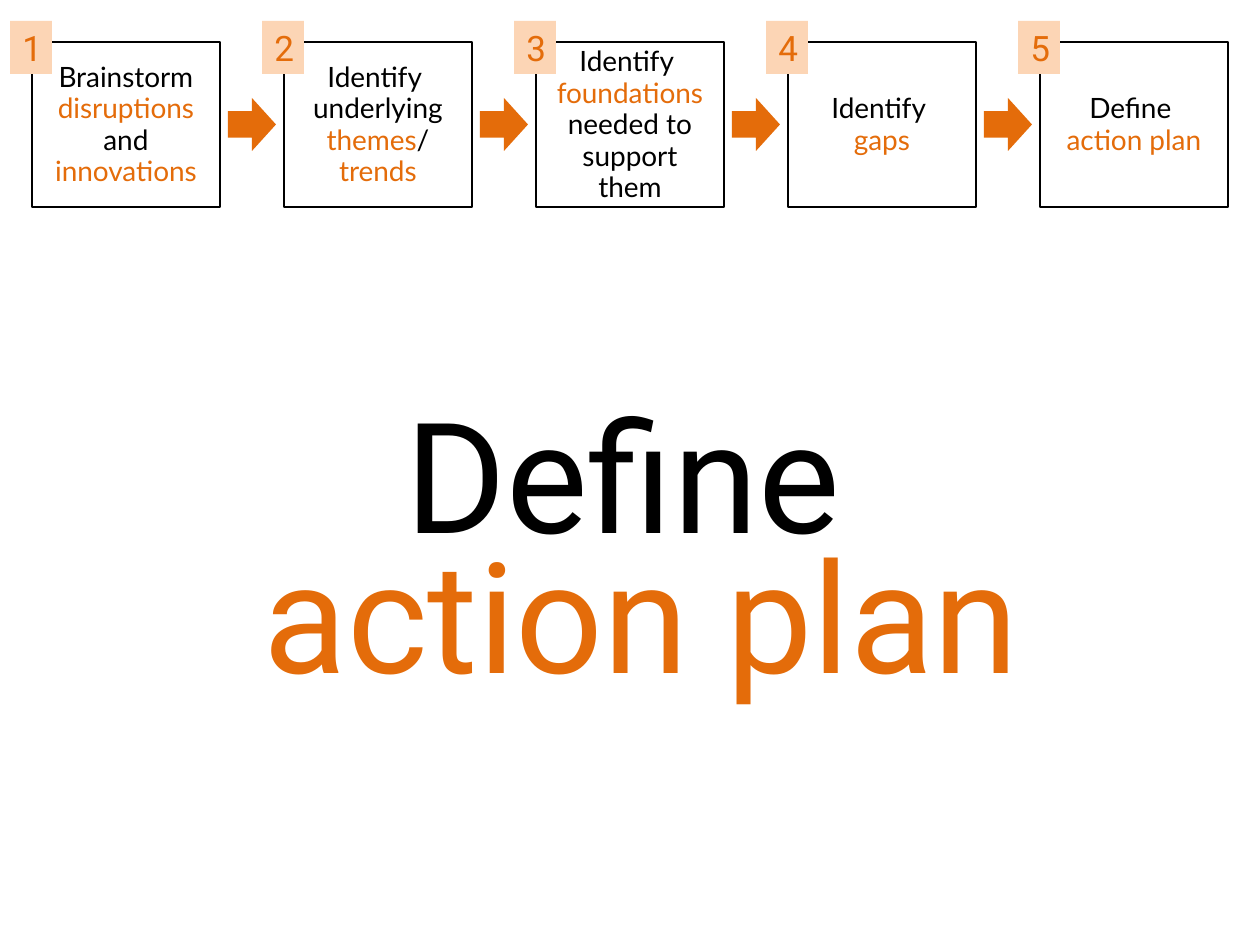
import dataclasses
import typing

import pptx
import pptx.dml.color
import pptx.enum.shapes
import pptx.enum.text
import pptx.util

RGB = pptx.dml.color.RGBColor
SHAPE = pptx.enum.shapes.MSO_SHAPE
ANCHOR = pptx.enum.text.MSO_ANCHOR
PX = 914400 / 126


@dataclasses.dataclass(frozen=True)
class Theme:
    black: RGB = RGB(0x00, 0x00, 0x00)
    white: RGB = RGB(0xFF, 0xFF, 0xFF)
    accent: RGB = RGB(0xE4, 0x6C, 0x0A)
    tint: RGB = RGB(0xFC, 0xD5, 0xB5)
    title_font: str = "Roboto"
    body_font: str = "Lato"
    title_size: int = 88
    title_leading: int = 80
    badge_size: int = 20
    step_size: int = 16
    step_leading: int = 18


class Box(typing.NamedTuple):
    left: int
    top: int
    width: int
    height: int

    def shifted(self, dx: int) -> "Box":
        return self._replace(left=self.left + dx)

    def emu(self) -> list[int]:
        return [round(v * PX) for v in self]


class Part(typing.NamedTuple):
    text: str
    accent: bool = False


class Style(typing.NamedTuple):
    font: str
    size: int
    leading: int | None = None


THEME = Theme()
TITLE_STYLE = Style(THEME.title_font, THEME.title_size, THEME.title_leading)
STEP_STYLE = Style(THEME.body_font, THEME.step_size, THEME.step_leading)
BADGE_STYLE = Style(THEME.title_font, THEME.badge_size)

PITCH = 252
TITLE = Box(84, 418, 1115, 295)
STEP = Box(32, 42, 188, 165)
ARROW = Box(228, 98, 48, 53)
BADGE = Box(10, 21, 42, 53)

ACTION_PLAN = [Part("Define \n"), Part("action plan", True)]
STEPS = [
    [Part("Brainstorm "), Part("disruptions", True),
     Part(" and "), Part("innovations", True)],
    [Part("Identify \nunderlying"), Part(" themes", True),
     Part("/ "), Part("trends", True)],
    [Part("Identify \n"), Part("foundations", True),
     Part(" needed to support them")],
    [Part("Identify \n"), Part("gaps", True)],
    ACTION_PLAN,
]


def write(sp, parts: list[Part], style: Style, anchor=ANCHOR.MIDDLE) -> None:
    """Fill a shape with one centred paragraph; newlines become line breaks."""
    tf = sp.text_frame
    tf.word_wrap = True
    tf.vertical_anchor = anchor
    p = tf.paragraphs[0]
    p.alignment = pptx.enum.text.PP_ALIGN.CENTER
    if style.leading:
        p.line_spacing = pptx.util.Pt(style.leading)
    for part in parts:
        for i, text in enumerate(part.text.split("\n")):
            if i:
                p.add_line_break()
            if text:
                r = p.add_run()
                r.text = text
                r.font.name = style.font
                r.font.size = pptx.util.Pt(style.size)
                r.font.color.rgb = THEME.accent if part.accent else THEME.black


def add_block(s, kind, box: Box, fill: RGB, line: RGB | None = None):
    sp = s.shapes.add_shape(kind, *box.emu())
    sp.shadow.inherit = False
    sp.fill.solid()
    sp.fill.fore_color.rgb = fill
    if line is None:
        sp.line.fill.background()
    else:
        sp.line.color.rgb = line
        sp.line.width = pptx.util.Pt(0.75)
    return sp


def add_title(s, parts: list[Part]) -> None:
    sp = s.shapes.title
    sp.left, sp.top, sp.width, sp.height = TITLE.emu()
    write(sp, parts, TITLE_STYLE, ANCHOR.TOP)
    sp.text_frame.auto_size = pptx.enum.text.MSO_AUTO_SIZE.SHAPE_TO_FIT_TEXT


def add_step(s, index: int, parts: list[Part]) -> None:
    """Draw a step box, its number badge and the arrow to the next step."""
    dx = index * PITCH
    step = add_block(s, SHAPE.RECTANGLE, STEP.shifted(dx), THEME.white, THEME.black)
    write(step, parts, STEP_STYLE)
    badge = add_block(s, SHAPE.RECTANGLE, BADGE.shifted(dx), THEME.tint)
    write(badge, [Part(str(index + 1), True)], BADGE_STYLE)
    if index < len(STEPS) - 1:
        add_block(s, SHAPE.RIGHT_ARROW, ARROW.shifted(dx), THEME.accent)


def main() -> None:
    prs = pptx.Presentation()
    prs.slide_width = pptx.util.Inches(10)
    prs.slide_height = pptx.util.Inches(7.5)
    s = prs.slides.add_slide(prs.slide_layouts.get_by_name("Title Only"))
    add_title(s, ACTION_PLAN)
    for index, parts in enumerate(STEPS):
        add_step(s, index, parts)
    prs.save("out.pptx")


if __name__ == "__main__":
    main()
